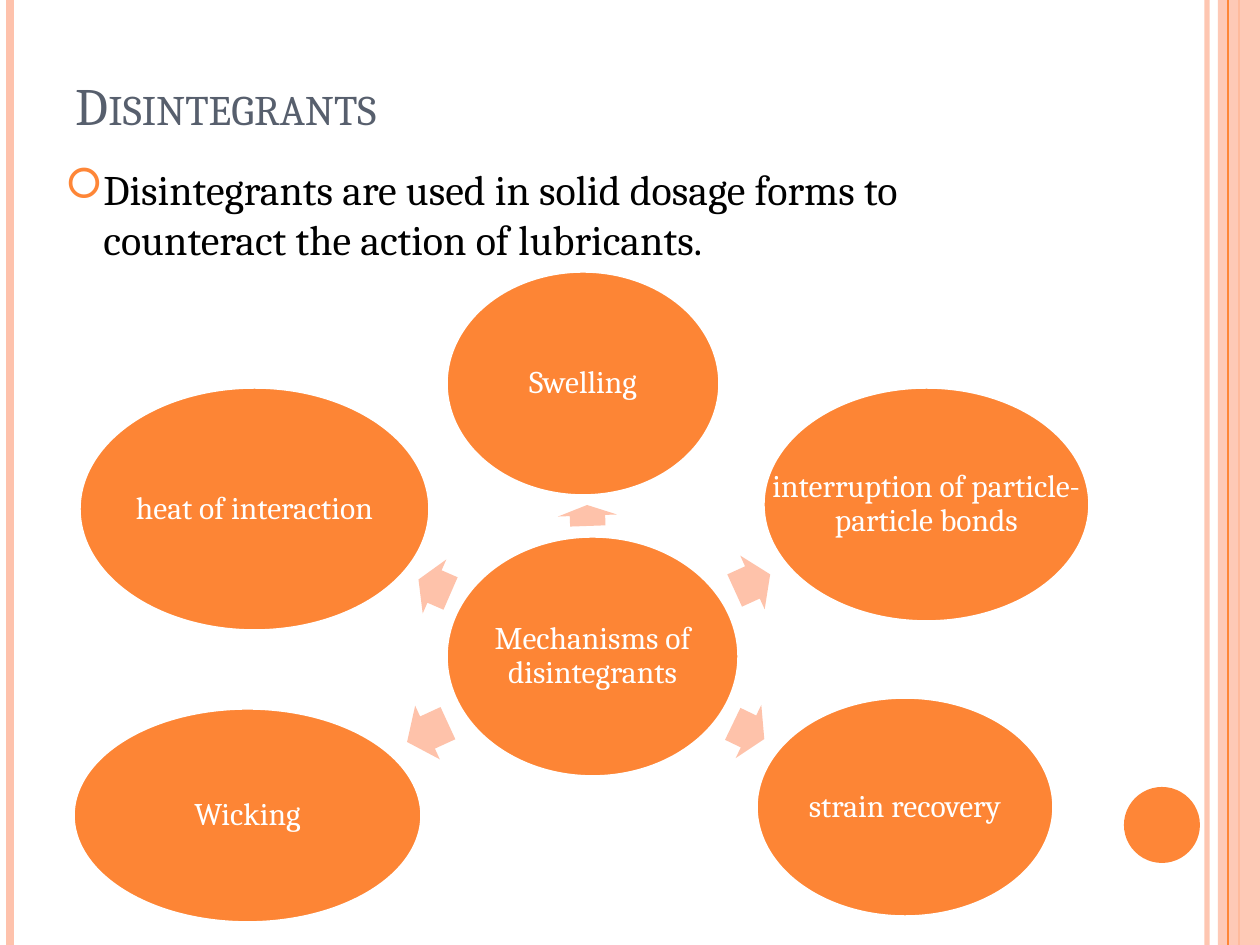
from dataclasses import dataclass

import pptx
import pptx.dml.color
import pptx.enum.shapes
import pptx.enum.text
import pptx.oxml
import pptx.oxml.ns
import pptx.util

SCALE = 914400 / 126
FONT = "Cambria"
COLOURS = {
    "rail": "FEC2AC",
    "accent": "FE8637",
    "node": "FD8535",
    "arrow": "FEC2AA",
    "title": "575F6D",
    "body": "000000",
    "white": "FFFFFF",
}
SHAPES = pptx.enum.shapes.MSO_SHAPE


@dataclass(frozen=True)
class Rail:
    x: int
    weight: float
    colour: str
    opacity: int = 100


@dataclass(frozen=True)
class Node:
    label: str
    x: int
    y: int
    width: int
    height: int


@dataclass(frozen=True)
class Arrow:
    x: int
    y: int
    width: int
    rotation: float
    height: int = 59


RAILS = [
    Rail(1207, 3, "rail", 93),
    Rail(10, 4.5, "rail"),
    Rail(1239, 1.5, "accent"),
    Rail(1228, 0.75, "accent"),
]
NODES = [
    Node("Mechanisms of disintegrants", 446, 536, 293, 241),
    Node("Swelling", 446, 271, 274, 225),
    Node("interruption of particle-\vparticle bonds", 763, 387, 327, 235),
    Node("strain recovery", 756, 697, 298, 220),
    Node("Wicking", 73, 708, 349, 215),
    Node("heat of interaction", 79, 387, 351, 244),
]
ARROWS = [
    Arrow(577, 486, 21, 268),
    Arrow(733, 553, 39, 335.5),
    Arrow(731, 702, 35, 25.7),
    Arrow(405, 703, 45, 155.3),
    Arrow(417, 557, 35, 203.6),
]


def px(length: int) -> int:
    return round(length * SCALE)


def rgb(name: str) -> pptx.dml.color.RGBColor:
    return pptx.dml.color.RGBColor.from_string(COLOURS[name])


def add_xml(parent, tag: str, **attributes: str):
    child = pptx.oxml.parse_xml(f"<a:{tag} {pptx.oxml.ns.nsdecls('a')}/>")
    for name, value in attributes.items():
        child.set(name, value)
    parent.append(child)
    return child


def set_opacity(properties, percent: int) -> None:
    for colour in properties.iter(pptx.oxml.ns.qn("a:srgbClr")):
        add_xml(colour, "alpha", val=str(percent * 1000))


def format_text(frame, size: int, colour: str) -> None:
    for para in frame.paragraphs:
        for span in para.runs:
            span.font.name = FONT
            span.font.size = pptx.util.Pt(size)
            span.font.color.rgb = rgb(colour)


def add_rail(page, rail: Rail) -> None:
    line = page.shapes.add_connector(
        pptx.enum.shapes.MSO_CONNECTOR.STRAIGHT, px(rail.x), 0, px(rail.x), px(945)
    )
    line.line.color.rgb = rgb(rail.colour)
    line.line.width = pptx.util.Pt(rail.weight)
    if rail.opacity < 100:
        set_opacity(line._element.spPr, rail.opacity)
    add_xml(line._element.spPr, "effectLst")


def add_filled(page, kind, x: int, y: int, width: int, height: int, colour: str):
    shape = page.shapes.add_shape(kind, px(x), px(y), px(width), px(height))
    shape.shadow.inherit = False
    shape.fill.solid()
    shape.fill.fore_color.rgb = rgb(colour)
    shape.line.fill.background()
    return shape


def add_node(page, node: Node) -> None:
    shape = add_filled(page, SHAPES.OVAL, node.x, node.y, node.width, node.height, "node")
    shape.line.color.rgb = rgb("white")
    shape.line.width = pptx.util.Pt(2)
    frame = shape.text_frame
    frame.margin_left = frame.margin_right = px(2)
    frame.margin_top = frame.margin_bottom = px(2)
    frame.vertical_anchor = pptx.enum.text.MSO_ANCHOR.MIDDLE
    frame.word_wrap = "\v" not in node.label
    frame.text = node.label
    para = frame.paragraphs[0]
    para.alignment = pptx.enum.text.PP_ALIGN.CENTER
    para.line_spacing = 0.9
    format_text(frame, 18, "white")


def add_arrow(page, arrow: Arrow) -> None:
    shape = add_filled(
        page, SHAPES.RIGHT_ARROW, arrow.x, arrow.y, arrow.width, arrow.height, "arrow"
    )
    shape.adjustments[0] = 0.6
    shape.adjustments[1] = 0.5
    shape.rotation = arrow.rotation


def set_title(page) -> None:
    title = page.shapes.title
    title.left, title.top, title.width, title.height = px(63), px(51), px(1029), px(91)
    frame = title.text_frame
    frame.text = "Disintegrants"
    frame.vertical_anchor = pptx.enum.text.MSO_ANCHOR.BOTTOM
    para = frame.paragraphs[0]
    para.alignment = pptx.enum.text.PP_ALIGN.LEFT
    format_text(frame, 30, "title")
    para.runs[0].font._element.set("cap", "small")


def add_body(page) -> None:
    box = page.shapes.add_textbox(px(53), px(157), px(1040), px(115))
    frame = box.text_frame
    frame.word_wrap = True
    frame.text = (
        "Disintegrants are used in solid dosage forms to counteract the action of lubricants."
    )
    properties = frame.paragraphs[0]._p.get_or_add_pPr()
    properties.set("marL", str(px(38)))
    properties.set("indent", str(-px(38)))
    add_xml(add_xml(properties, "buClr"), "srgbClr", val=COLOURS["accent"])
    add_xml(properties, "buFont", typeface="Wingdings", pitchFamily="2", charset="2")
    add_xml(properties, "buChar", char="¡")
    format_text(frame, 24, "body")


def main() -> None:
    deck = pptx.Presentation()
    deck.slide_width, deck.slide_height = px(1260), px(945)
    page = deck.slides.add_slide(deck.slide_layouts[5])
    for rail in RAILS[:3]:
        add_rail(page, rail)
    band = add_filled(page, SHAPES.RECTANGLE, 1218, 0, 42, 945, "rail")
    set_opacity(band._element.spPr, 87)
    add_rail(page, RAILS[3])
    add_filled(page, SHAPES.OVAL, 1124, 787, 76, 76, "accent")
    set_title(page)
    add_body(page)
    for arrow in ARROWS:
        add_arrow(page, arrow)
    for node in NODES:
        add_node(page, node)
    deck.save("out.pptx")


if __name__ == "__main__":
    main()
